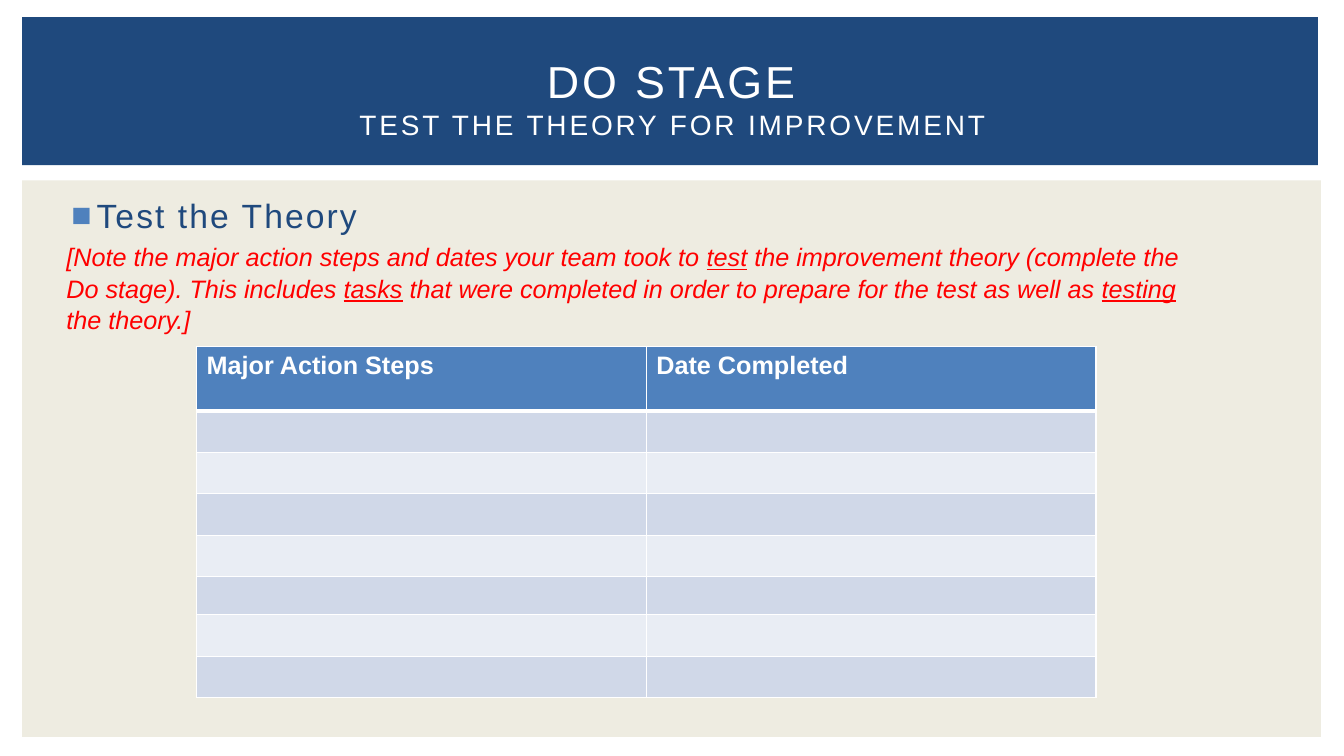
import pptx
import pptx.util
import pptx.dml.color
import pptx.enum.shapes
import pptx.enum.text
import pptx.oxml
import pptx.oxml.ns

RGB = pptx.dml.color.RGBColor
NAVY = RGB(0x1F, 0x49, 0x7D)
BLUE = RGB(0x4F, 0x81, 0xBD)
SAND = RGB(0xEE, 0xEC, 0xE1)
WHITE = RGB(0xFF, 0xFF, 0xFF)
RED = RGB(0xFF, 0x00, 0x00)
BANDS = [RGB(0xD0, 0xD8, 0xE8), RGB(0xE9, 0xED, 0xF4)]
SCALE = 9144
ALIGN = pptx.enum.text.PP_ALIGN
ANCHOR = pptx.enum.text.MSO_ANCHOR


def px(*sizes):
    return [pptx.util.Emu(size * SCALE) for size in sizes]


def xml(text):
    space = pptx.oxml.ns.nsdecls("a")
    return pptx.oxml.parse_xml(text.replace(">", f" {space}>", 1))


def panel(slide, box, color):
    kind = pptx.enum.shapes.MSO_SHAPE.RECTANGLE
    shape = slide.shapes.add_shape(kind, *px(*box))
    shape.shadow.inherit = False
    shape.fill.solid()
    shape.fill.fore_color.rgb = color
    shape.line.fill.background()


def label(slide, box, anchor=ANCHOR.TOP):
    frame = slide.shapes.add_textbox(*px(*box)).text_frame
    frame.word_wrap = True
    frame.vertical_anchor = anchor
    return frame.paragraphs[0]


def write(para, text, size, color, space=0, bold=False, slant=False, under=False):
    run = para.add_run()
    run.text = text
    font = run.font
    font.name = "Arial"
    font.size = pptx.util.Pt(size)
    font.color.rgb = color
    font.bold = bold
    font.italic = slant
    font.underline = under
    if space:
        font._element.set("spc", str(space))


def bullet(para, left, hang):
    props = para._p.get_or_add_pPr()
    props.set("marL", str(left * SCALE))
    props.set("indent", str(-hang * SCALE))
    props.append(xml(f'<a:buClr><a:srgbClr val="{BLUE}"/></a:buClr>'))
    props.append(xml('<a:buFont typeface="Arial"></a:buFont>'))
    props.append(xml('<a:buChar char="■"></a:buChar>'))


def paint(cell, color, base):
    props = cell._tc.get_or_add_tcPr()
    for side, width in (("L", 1), ("R", 1), ("T", 1), ("B", base)):
        props.append(xml(
            f'<a:ln{side} w="{width * 12700}"><a:solidFill>'
            f'<a:srgbClr val="{WHITE}"/></a:solidFill></a:ln{side}>'))
    cell.fill.solid()
    cell.fill.fore_color.rgb = color


def grid(slide, left, top, heads, width, rows):
    box = px(left, top, width * len(heads), sum(rows))
    table = slide.shapes.add_table(len(rows), len(heads), *box).table
    for col in table.columns:
        col.width = px(width)[0]
    for i, high in enumerate(rows):
        table.rows[i].height = px(high)[0]
        for j, head in enumerate(heads):
            cell = table.cell(i, j)
            if i == 0:
                paint(cell, BLUE, 3)
                write(cell.text_frame.paragraphs[0], head, 18, WHITE, bold=True)
            else:
                paint(cell, BANDS[(i - 1) % 2], 1)
                cell.margin_top = cell.margin_bottom = 0


def main():
    deck = pptx.Presentation()
    deck.slide_width, deck.slide_height = px(1333, 750)
    slide = deck.slides.add_slide(deck.slide_layouts[6])
    panel(slide, (22, 179, 1288, 552), SAND)
    panel(slide, (22, 17, 1285, 147), NAVY)

    title = label(slide, (56, 39, 1222, 115), ANCHOR.MIDDLE)
    title.alignment = ALIGN.CENTER
    write(title, "DO STAGE", 32, WHITE, 200)
    title.add_line_break()
    write(title, "TEST THE THEORY FOR IMPROVEMENT", 20, WHITE, 200)

    head = label(slide, (56, 188, 1226, 45))
    head.space_before = pptx.util.Pt(4.8)
    bullet(head, 30, 25)
    write(head, "Test the Theory", 24, NAVY, 150)

    grid(slide, 195, 344, ["Major Action Steps", "Date Completed"], 446,
         [64, 41, 41, 41, 41, 38, 41, 41])

    note = label(slide, (56, 234, 1160, 101))
    note.line_spacing = 1.03
    parts = [
        "[Note the major action steps and dates your team took to ",
        "test",
        " the improvement theory (complete the Do stage). This includes ",
        "tasks",
        " that were completed in order to prepare for the test as well as ",
        "testing",
        " the theory.]",
    ]
    for i, part in enumerate(parts):
        write(note, part, 18, RED, slant=True, under=i % 2 == 1)

    deck.save("out.pptx")


if __name__ == "__main__":
    main()
